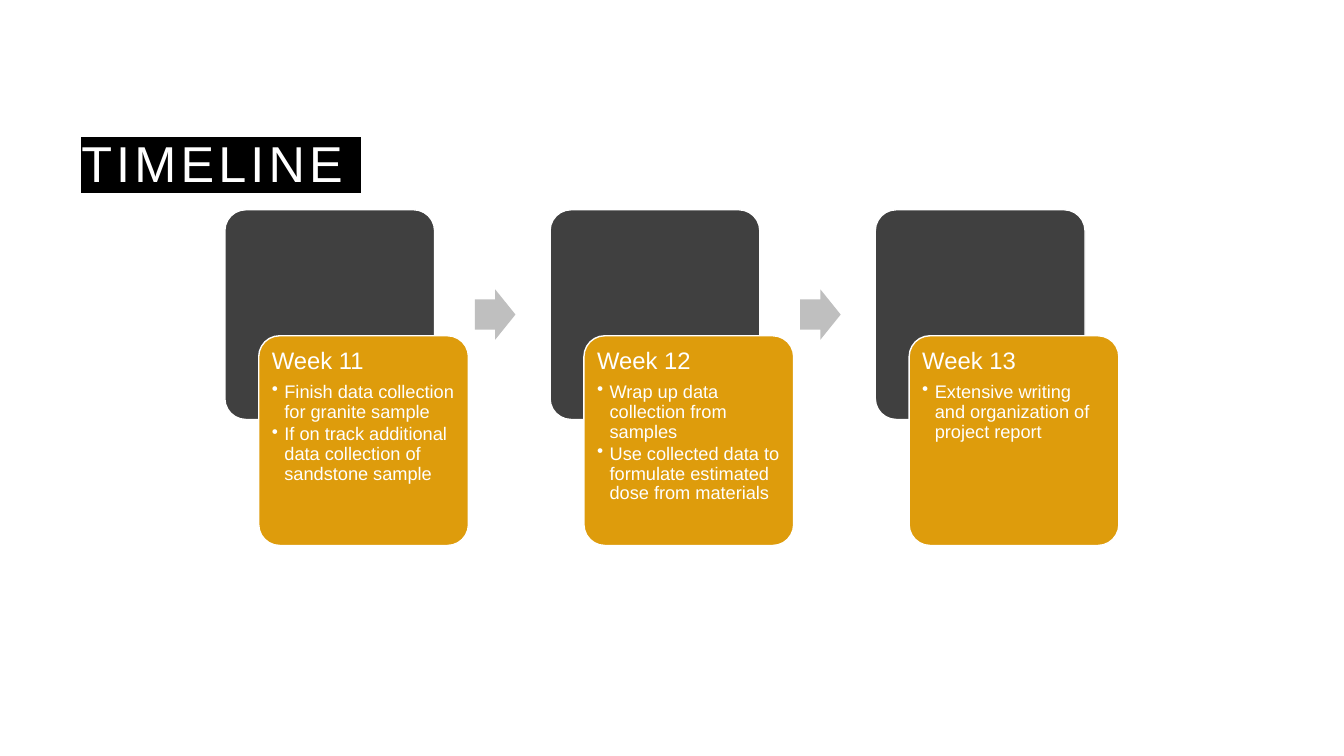
from dataclasses import dataclass

from lxml import etree
from pptx import Presentation
from pptx.dml.color import RGBColor
from pptx.enum.shapes import MSO_SHAPE as Preset
from pptx.enum.text import MSO_ANCHOR as Anchor, PP_ALIGN as Align
from pptx.oxml.ns import qn
from pptx.util import Pt


@dataclass(frozen=True)
class Theme:
    font: str = "Arial"
    white: str = "FFFFFF"
    black: str = "000000"
    dark: str = "404040"
    amber: str = "DE9C0C"
    grey: str = "BFBFBF"
    title: int = 36
    heading: int = 17
    body: int = 13


THEME = Theme()
SIDE = 149.8
FIRST_LEFT, TOP, STEP = 160.6, 149.8, 232.3
CARD_SHIFT = (24.2, 90)
ARROW_SHIFT = (178.6, 56.9)
BULLET_INDENT = 9

WEEKS = [
    ("Week 11", ["Finish data collection for granite sample",
                 "If on track additional data collection of sandstone sample"]),
    ("Week 12", ["Wrap up data collection from samples",
                 "Use collected data to formulate estimated dose from materials"]),
    ("Week 13", ["Extensive writing and organization of project report"]),
]


def write(paragraph, text, *, size, line=0.9, after=0, bullet=False,
          tracking=0, highlight=None):
    paragraph.alignment = Align.LEFT
    paragraph.line_spacing = line
    paragraph.space_before = Pt(0)
    paragraph.space_after = Pt(after)
    if bullet:
        layout = paragraph._p.get_or_add_pPr()
        layout.set("marL", str(Pt(BULLET_INDENT)))
        layout.set("indent", str(-Pt(BULLET_INDENT)))
        etree.SubElement(layout, qn("a:buChar")).set("char", "•")
    run = paragraph.add_run()
    run.text = text
    run.font.size = Pt(size)
    run.font.name = THEME.font
    run.font.color.rgb = RGBColor.from_string(THEME.white)
    style = run._r.get_or_add_rPr()
    if tracking:
        style.set("spc", str(tracking * 100))
    if highlight:
        marker = etree.Element(qn("a:highlight"))
        etree.SubElement(marker, qn("a:srgbClr")).set("val", highlight)
        style.find(qn("a:solidFill")).addnext(marker)


def set_frame(frame, anchor, side_inset, end_inset):
    frame.word_wrap = True
    frame.vertical_anchor = anchor
    frame.margin_left = frame.margin_right = Pt(side_inset)
    frame.margin_top = frame.margin_bottom = Pt(end_inset)


def add_block(slide, preset, left, top, width, height, fill, adjustments, outline=None):
    block = slide.shapes.add_shape(preset, Pt(left), Pt(top), Pt(width), Pt(height))
    block.shadow.inherit = False
    for index, value in enumerate(adjustments):
        block.adjustments[index] = value
    block.fill.solid()
    block.fill.fore_color.rgb = RGBColor.from_string(fill)
    if outline:
        block.line.color.rgb = RGBColor.from_string(outline)
        block.line.width = Pt(1)
    else:
        block.line.fill.background()
    return block


def add_square(slide, left, top, fill):
    return add_block(slide, Preset.ROUNDED_RECTANGLE, left, top, SIDE, SIDE,
                     fill, [0.1], THEME.white)


def add_title(slide, text):
    title = slide.shapes.add_textbox(Pt(51), Pt(51), Pt(837), Pt(90)).text_frame
    set_frame(title, Anchor.BOTTOM, 7.2, 3.6)
    write(title.paragraphs[0], text, size=THEME.title, line=1.2,
          tracking=3, highlight=THEME.black)


def add_week(slide, left, heading, tasks):
    add_square(slide, left, TOP, THEME.dark)
    card = add_square(slide, left + CARD_SHIFT[0], TOP + CARD_SHIFT[1],
                      THEME.amber).text_frame
    set_frame(card, Anchor.TOP, 5, 5)
    write(card.paragraphs[0], heading, size=THEME.heading, after=6)
    for task in tasks:
        write(card.add_paragraph(), task, size=THEME.body, after=2, bullet=True)


def add_arrow(slide, week_left):
    add_block(slide, Preset.RIGHT_ARROW, week_left + ARROW_SHIFT[0],
              TOP + ARROW_SHIFT[1], 29, 36, THEME.grey, [0.6, 0.5])


def main():
    deck = Presentation()
    deck.slide_width, deck.slide_height = Pt(960), Pt(540)
    slide = deck.slides.add_slide(deck.slide_layouts[6])
    add_title(slide, "TIMELINE ")
    for index, (heading, tasks) in enumerate(WEEKS):
        left = FIRST_LEFT + index * STEP
        add_week(slide, left, heading, tasks)
        if index < len(WEEKS) - 1:
            add_arrow(slide, left)
    deck.save("out.pptx")


if __name__ == "__main__":
    main()
